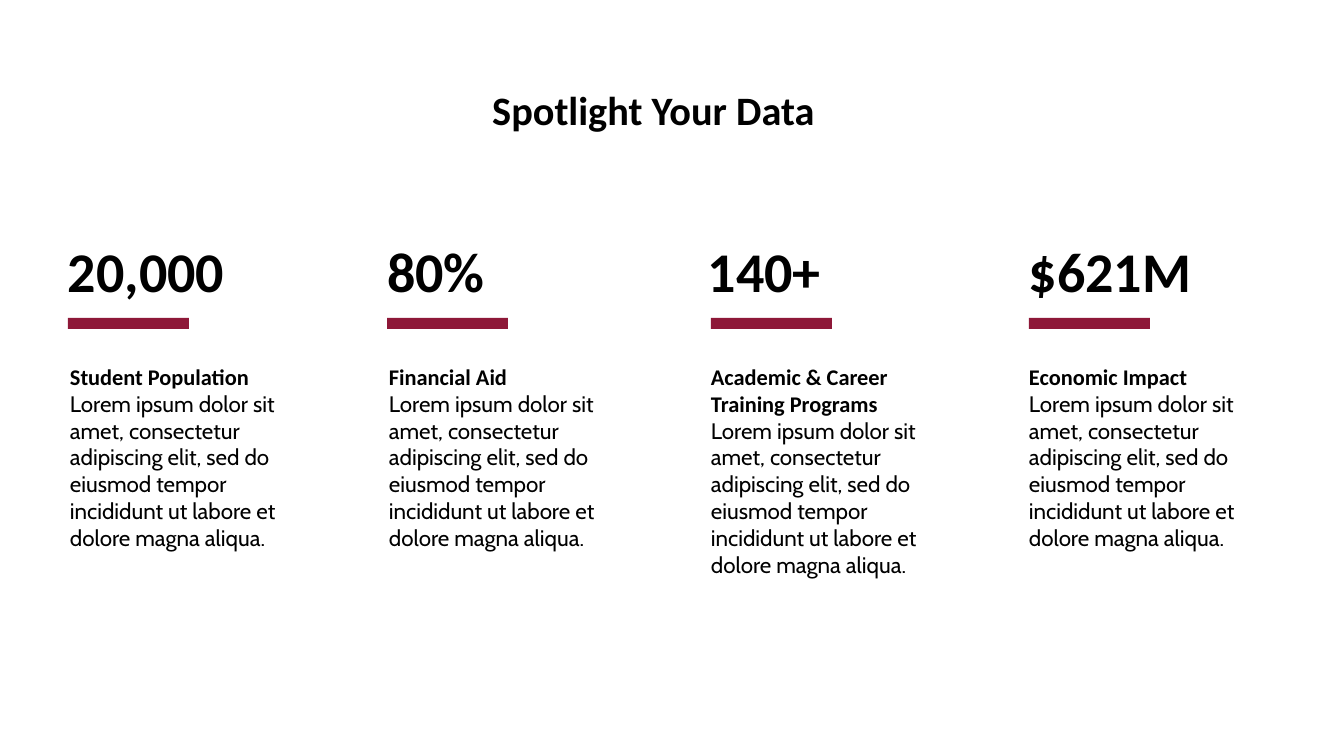
from pptx import Presentation
from pptx.dml.color import RGBColor
from pptx.enum.shapes import MSO_SHAPE
from pptx.enum.text import MSO_ANCHOR, MSO_AUTO_SIZE, PP_ALIGN
from pptx.util import Pt

RECTANGLE = MSO_SHAPE.RECTANGLE
MIDDLE = MSO_ANCHOR.MIDDLE
GROW = MSO_AUTO_SIZE.SHAPE_TO_FIT_TEXT
CENTER = PP_ALIGN.CENTER

# Content
TITLE = "Spotlight Your Data"
BODY = ("Lorem ipsum dolor sit amet, consectetur adipiscing elit, "
        "sed do eiusmod tempor incididunt ut labore et dolore magna aliqua.")
# figure, heading, then left edges of figure, bar and text, figure width, text height
COLUMNS = [
    ("20,000", "Student Population", 68, 68, 70, 251, 190),
    ("80%", "Financial Aid", 387, 387, 389, 251, 190),
    ("140+", "Academic & Career Training Programs", 708, 711, 711, 251, 217),
    ("$621M", "Economic Impact", 1029, 1029, 1029, 281, 190),
]

# Style
BLACK = RGBColor(0x00, 0x00, 0x00)
MAROON = RGBColor(0x8E, 0x18, 0x38)
HEADING_FONT = "Calibri"
BODY_FONT = "Cabin"
EMU_PER_PX = 914400 / 100.8


def px(*lengths):
    return [round(length * EMU_PER_PX) for length in lengths]


def style(para, size, name=HEADING_FONT, bold=True):
    font = para.font
    font.name, font.size, font.bold = name, Pt(size), bold
    font.color.rgb = BLACK


def add_text(page, left, top, width, height):
    frame = page.shapes.add_textbox(*px(left, top, width, height)).text_frame
    frame.word_wrap = True
    return frame


def add_column_text(page, left, top, width, height):
    frame = add_text(page, left, top, width, height)
    frame.margin_left = frame.margin_right = 0
    frame.margin_top = frame.margin_bottom = 0
    frame.auto_size = GROW
    return frame


def main():
    deck = Presentation()
    deck.slide_width, deck.slide_height = px(1344, 756)
    page = deck.slides.add_slide(deck.slide_layouts[6])

    # Title
    frame = add_text(page, 55, 89, 1197, 50)
    frame.vertical_anchor = MIDDLE
    para = frame.paragraphs[0]
    para.text = TITLE
    para.alignment = CENTER
    para.line_spacing = 0.8
    style(para, 28.8)

    for figure, heading, figure_x, bar_x, text_x, figure_w, text_h in COLUMNS:
        # Large figure
        para = add_column_text(page, figure_x, 237, figure_w, 68).paragraphs[0]
        para.text = figure
        style(para, 40)

        # Accent bar
        bar = page.shapes.add_shape(RECTANGLE, *px(bar_x, 318, 121, 11))
        bar.shadow.inherit = False
        bar.fill.solid()
        bar.fill.fore_color.rgb = MAROON
        bar.line.fill.background()

        # Heading and description
        frame = add_column_text(page, text_x, 363, 247, text_h)
        para = frame.paragraphs[0]
        para.text = heading
        style(para, 16)
        para = frame.add_paragraph()
        para.text = BODY
        style(para, 16, BODY_FONT, bold=False)

    deck.save("out.pptx")


if __name__ == "__main__":
    main()
